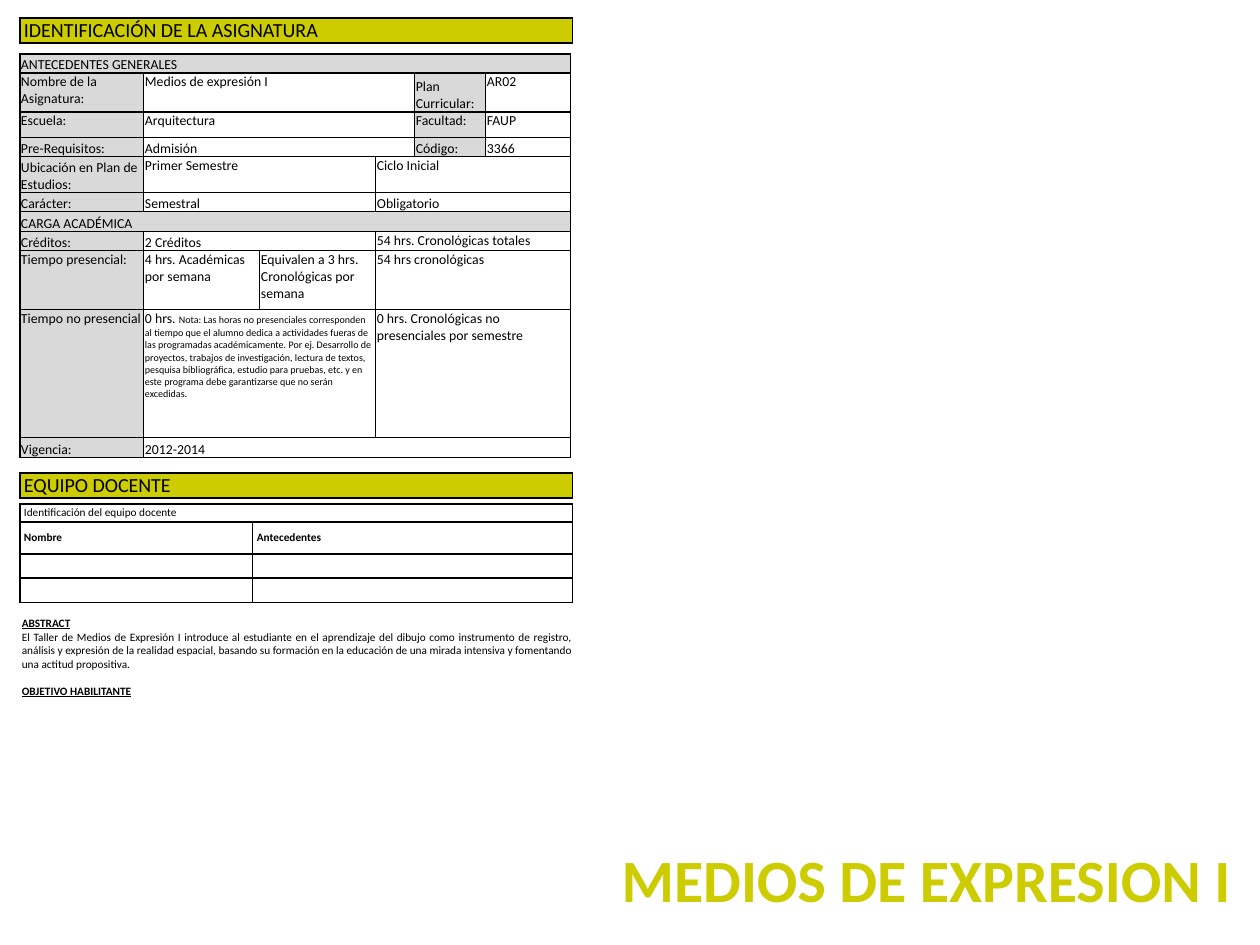
"""Build the course identification slide for Medios de expresión I."""
from dataclasses import dataclass

from lxml.etree import SubElement
from pptx import Presentation
from pptx.dml.color import RGBColor
from pptx.enum.text import MSO_ANCHOR, MSO_AUTO_SIZE, PP_ALIGN
from pptx.oxml.ns import qn
from pptx.util import Emu, Pt


@dataclass(frozen=True)
class Theme:
    """Colours, font and type sizes in points."""
    font: str = "Calibri"
    ink: str = "000000"
    accent: str = "CCCC00"
    label: str = "D9D9D9"
    title: int = 48
    bar: int = 16
    table: int = 11
    small: int = 9
    note: int = 8


THEME = Theme()
LEFT, WIDTH = 20, 553
ANCHORS = {"t": MSO_ANCHOR.TOP, "m": MSO_ANCHOR.MIDDLE, "b": MSO_ANCHOR.BOTTOM}

NOTE = ("Nota: Las horas no presenciales corresponden al tiempo que el alumno dedica a "
        "actividades fueras de las programadas académicamente. Por ej. Desarrollo de "
        "proyectos, trabajos de investigación, lectura de textos, pesquisa bibliográfica, "
        "estudio para pruebas, etc. y en este programa debe garantizarse que no serán "
        "excedidas.")
ABSTRACT = ("El Taller de Medios de Expresión I introduce al estudiante en el aprendizaje "
            "del dibujo como instrumento de registro, análisis y expresión de la realidad "
            "espacial, basando su formación en la educación de una mirada intensiva y "
            "fomentando una actitud propositiva.")

COURSE_COLS = [124, 116, 116, 39, 71, 85]
COURSE_ROWS = [
    (19, "bbbbbb", ["ANTECEDENTES GENERALES", None, None, None, None, None]),
    (39, "ttttbt", ["Nombre de la Asignatura:", "Medios de expresión I", None, None,
                    "Plan Curricular:", "AR02"]),
    (26, "tttttt", ["Escuela:", "Arquitectura", None, None, "Facultad:", "FAUP"]),
    (19, "bbbbbb", ["Pre-Requisitos:", "Admisión", None, None, "Código:", "3366"]),
    (36, "bttttt", ["Ubicación en Plan de Estudios:", "Primer Semestre", None,
                    "Ciclo Inicial", None, None]),
    (19, "bbbbbb", ["Carácter:", "Semestral", None, "Obligatorio", None, None]),
    (20, "bbbbbb", ["CARGA ACADÉMICA", None, None, None, None, None]),
    (19, "bbbttt", ["Créditos:", "2 Créditos", None, "54 hrs. Cronológicas totales",
                    None, None]),
    (59, "tttttt", ["Tiempo presencial:", "4 hrs. Académicas por semana",
                    "Equivalen a 3 hrs. Cronológicas por semana",
                    "54 hrs cronológicas", None, None]),
    (128, "tttttt", ["Tiempo no presencial", ("0 hrs. ", NOTE), None,
                     "0 hrs. Cronológicas no presenciales por semestre", None, None]),
    (20, "bbbbbb", ["Vigencia:", "2012-2014", None, None, None, None]),
]
TEAM_COLS = [233, 320]
TEAM_ROWS = [
    (18, "mm", ["Identificación del equipo docente", None]),
    (32, "mm", ["Nombre", "Antecedentes"]),
    (24, "mm", ["", ""]),
    (25, "mm", ["", ""]),
]


def px(n):
    """Convert pixels to EMU at 90 pixels to the inch."""
    return Emu(n * 10160)


def style_run(r, size, color=THEME.ink, bold=False, underline=False):
    """Format one run."""
    r.font.name, r.font.size = THEME.font, Pt(size)
    r.font.bold, r.font.underline = bold, underline
    r.font.color.rgb = RGBColor.from_string(color)


def add_borders(cell):
    """Draw a one-point line on each side of a cell."""
    tc_pr = cell._tc.get_or_add_tcPr()
    for side in ("lnL", "lnR", "lnT", "lnB"):
        ln = SubElement(tc_pr, qn(f"a:{side}"), w=str(Pt(1)))
        fill = SubElement(ln, qn("a:solidFill"))
        SubElement(fill, qn("a:srgbClr"), val=THEME.ink)


def fill_cell(cell, text, size, anchor, margin, bold):
    """Write a cell whose optional second run is a note."""
    cell.margin_left = cell.margin_right = px(margin)
    cell.margin_top = cell.margin_bottom = 0
    cell.vertical_anchor = ANCHORS[anchor]
    p = cell.text_frame.paragraphs[0]
    parts = text if isinstance(text, tuple) else (text,)
    for part, part_size in zip(parts, (size, THEME.note)):
        if part:
            r = p.add_run()
            r.text = part
            style_run(r, part_size, bold=bold)
    p._p.get_or_add_endParaRPr().set("sz", str(size * 100))


def add_grid(s, top, cols, rows, size, margin, shade=None, shaded=(), bold_row=None):
    """Add a bordered table; None continues the cell to its left."""
    height = sum(row[0] for row in rows)
    table = s.shapes.add_table(len(rows), len(cols), px(LEFT), px(top),
                               px(sum(cols)), px(height)).table
    table.first_row = table.horz_banding = False
    for column, width in zip(table.columns, cols):
        column.width = px(width)
    for i, (row_height, anchors, texts) in enumerate(rows):
        table.rows[i].height = px(row_height)
        for j, text in enumerate(texts):
            cell = table.cell(i, j)
            add_borders(cell)
            if text is None:
                cell.fill.background()
                continue
            end = j
            while end + 1 < len(texts) and texts[end + 1] is None:
                end += 1
            if end > j:
                cell.merge(table.cell(i, end))
            if j in shaded:
                cell.fill.solid()
                cell.fill.fore_color.rgb = RGBColor.from_string(shade)
            else:
                cell.fill.background()
            fill_cell(cell, text, size, anchors[j], margin, i == bold_row)


def add_bar(s, top, text):
    """Add a section heading bar."""
    add_grid(s, top, [WIDTH], [(25, "t", [text])], THEME.bar, 4, THEME.accent, (0,))


def add_title(s, text):
    """Place and format the slide title."""
    sp = s.shapes.title
    sp.left, sp.top, sp.width, sp.height = px(602), px(838), px(638), px(82)
    tf = sp.text_frame
    tf.text = text
    tf.auto_size, tf.vertical_anchor = MSO_AUTO_SIZE.NONE, MSO_ANCHOR.TOP
    p = tf.paragraphs[0]
    p.alignment = PP_ALIGN.RIGHT
    style_run(p.runs[0], THEME.title, THEME.accent, bold=True)


def add_abstract(s):
    """Add the justified summary with its underlined headings."""
    tf = s.shapes.add_textbox(px(13), px(612), px(567), px(91)).text_frame
    tf.word_wrap = True
    items = [("ABSTRACT", True, 0), (ABSTRACT, False, 0), ("OBJETIVO HABILITANTE", True, 11)]
    for i, (text, heading, gap) in enumerate(items):
        p = tf.add_paragraph() if i else tf.paragraphs[0]
        p.text = text
        p.alignment, p.space_before = PP_ALIGN.JUSTIFY, Pt(gap)
        style_run(p.runs[0], THEME.small, bold=heading, underline=heading)


def main():
    """Build and save the slide."""
    prs = Presentation()
    prs.slide_width, prs.slide_height = px(1260), px(945)
    s = prs.slides.add_slide(prs.slide_layouts[5])
    add_title(s, "MEDIOS DE EXPRESION I")
    add_bar(s, 18, "IDENTIFICACIÓN DE LA ASIGNATURA")
    add_grid(s, 54, COURSE_COLS, COURSE_ROWS, THEME.table, 1, THEME.label, (0, 4))
    add_bar(s, 473, "EQUIPO DOCENTE")
    add_grid(s, 504, TEAM_COLS, TEAM_ROWS, THEME.small, 4, bold_row=1)
    add_abstract(s)
    prs.save("out.pptx")


if __name__ == "__main__":
    main()
